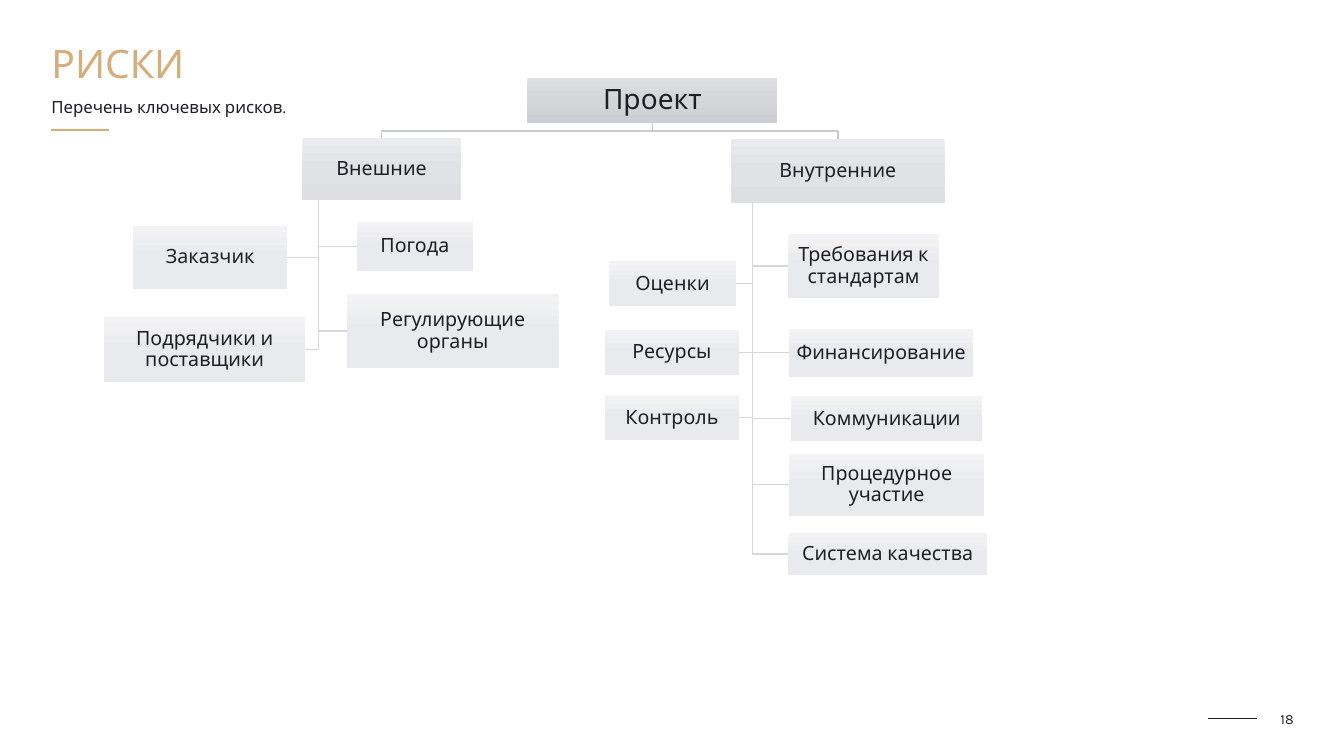
from copy import deepcopy

from pptx import Presentation
from pptx.dml.color import RGBColor
from pptx.enum.shapes import MSO_CONNECTOR, MSO_SHAPE
from pptx.enum.text import MSO_ANCHOR, MSO_AUTO_SIZE, PP_ALIGN
from pptx.oxml.ns import qn
from pptx.util import Inches, Pt
from lxml.etree import SubElement

DARK, GOLD = "1C1F26", "D6AE7B"
ROOT = ("DDDEE1", "D3D5D8", "CDCFD4")
GROUP = ("EAEBEE", "E1E2E6", "DDDFE3")
LEAF = ("F3F3F5", "E9EAED", "E6E8EB")


def paint(color, value):
    color.rgb = RGBColor.from_string(value)


def write(shape, text, size=14, color=DARK, align=PP_ALIGN.LEFT,
          anchor=MSO_ANCHOR.MIDDLE, inset=0, space=1.0, wrap=True):
    frame = shape.text_frame
    frame.text = text
    frame.auto_size = MSO_AUTO_SIZE.NONE
    frame.word_wrap = wrap
    frame.vertical_anchor = anchor
    frame.margin_left = frame.margin_right = Inches(inset)
    frame.margin_top = frame.margin_bottom = Inches(inset)
    line = frame.paragraphs[0]
    props = line._p.get_or_add_pPr()
    props.set("marL", "0")
    props.set("indent", "0")
    SubElement(props, qn("a:buNone"))
    line.alignment = align
    line.line_spacing = space
    line.space_before = Pt(0)
    line.font.name = "Karla"
    line.font.size = Pt(size)
    paint(line.font.color, color)


deck = Presentation()
deck.slide_width, deck.slide_height = Inches(13.33), Inches(7.5)
slide = deck.slides.add_slide(deck.slide_layouts[1])
shapes = slide.shapes

# Heading, page number and rules
title, body = slide.placeholders
for holder, top, height in ((title, 0.96, 0.2), (body, 0.16, 0.71)):
    holder.left, holder.top = Inches(0.51), Inches(top)
    holder.width, holder.height = Inches(12.31), Inches(height)
write(title, "Перечень ключевых рисков.", size=12, anchor=MSO_ANCHOR.BOTTOM)
write(body, "РИСКИ", size=28, color=GOLD, anchor=MSO_ANCHOR.TOP, space=1.5)

page = shapes.add_textbox(Inches(12.65), Inches(7.05), Inches(0.18), Inches(0.17))
write(page, "18", size=10, align=PP_ALIGN.RIGHT, wrap=False)

for left, right, y, color, width in ((0.51, 1.08, 1.29, GOLD, 1.5),
                                     (11.98, 12.47, 7.13, DARK, 1)):
    rule = shapes.add_connector(MSO_CONNECTOR.STRAIGHT, Inches(left), Inches(y),
                                Inches(right), Inches(y))
    paint(rule.line.color, color)
    rule.line.width = Pt(width)
    SubElement(rule._element.spPr, qn("a:effectLst"))

# Risk tree: text, left, top, width, height
root = ("Проект", 5.23, 0.77, 2.48, 0.45)
tree = [
    (("Внешние", 3, 1.37, 1.57, 0.61), [
        ("Погода", 3.54, 2.2, 1.15, 0.49),
        ("Подрядчики и поставщики", 1.03, 3.14, 2, 0.65),
        ("Регулирующие органы", 3.44, 2.92, 2.1, 0.73),
        ("Заказчик", 1.32, 2.24, 1.53, 0.63),
    ]),
    (("Внутренние", 7.25, 1.38, 2.12, 0.63), [
        ("Коммуникации", 7.85, 3.93, 1.89, 0.45),
        ("Контроль", 6, 3.92, 1.33, 0.45),
        ("Оценки", 6.04, 2.59, 1.26, 0.45),
        ("Финансирование", 7.83, 3.26, 1.82, 0.48),
        ("Ресурсы", 6, 3.27, 1.33, 0.45),
        ("Процедурное участие", 7.83, 4.5, 1.93, 0.62),
        ("Требования к стандартам", 7.82, 2.32, 1.49, 0.64),
        ("Система качества", 7.82, 5.29, 1.97, 0.41),
    ]),
]

# Links hang from a trunk at a tenth of each group's width
boxes = [(root, ROOT, 20)]
links = []
start, base = root[1] + root[3] / 2, root[2] + root[4]
for group, leaves in tree:
    _, left, top, width, height = group
    boxes.append((group, GROUP, 14))
    mid = left + width / 2
    links.append(("C9CCD3", [(start, base), (start, 1.3), (mid, 1.3), (mid, top)]))
    trunk = left + width / 10
    for leaf in leaves:
        _, x, y, wide, high = leaf
        boxes.append((leaf, LEAF, 14))
        end = x + wide if x < trunk else x
        mid = y + high / 2
        links.append(("D5D7DC", [(trunk, top + height), (trunk, mid), (end, mid)]))

for color, points in links:
    spots = [(Inches(x), Inches(y)) for x, y in points]
    path = shapes.build_freeform(*spots[0])
    path.add_line_segments(spots[1:], close=False)
    link = path.convert_to_shape()
    link.shadow.inherit = False
    link.fill.background()
    paint(link.line.color, color)
    link.line.width = Pt(1)

for (text, *place), shades, size in boxes:
    box = shapes.add_shape(MSO_SHAPE.RECTANGLE, *map(Inches, place))
    box.shadow.inherit = False
    box.line.fill.background()
    box.fill.gradient()
    box.fill.gradient_angle = 270
    stops = box._element.spPr.find(qn("a:gradFill")).find(qn("a:gsLst"))
    stops.insert(1, deepcopy(stops[0]))
    for stop, spot, shade in zip(box.fill.gradient_stops, (0, 0.5, 1), shades):
        stop.position = spot
        paint(stop.color, shade)
    write(box, text, size=size, align=PP_ALIGN.CENTER, inset=0.01, space=0.9)

deck.save("out.pptx")
